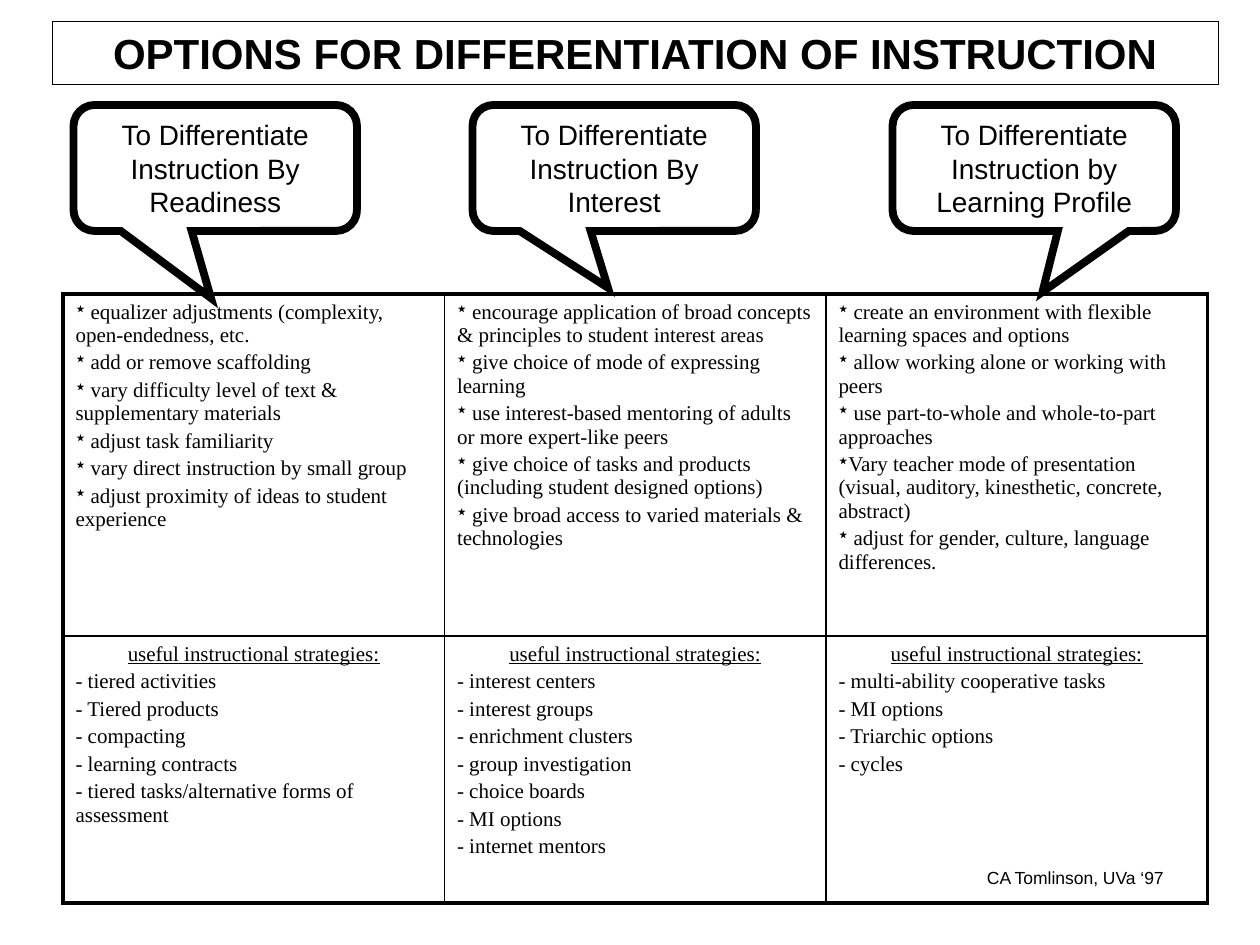
from dataclasses import dataclass

from lxml.etree import SubElement
from pptx import Presentation
from pptx.dml.color import RGBColor
from pptx.enum.shapes import MSO_SHAPE
from pptx.enum.text import MSO_ANCHOR, PP_ALIGN
from pptx.oxml.ns import qn
from pptx.util import Pt


@dataclass(frozen=True)
class Theme:
    ink: RGBColor = RGBColor(0, 0, 0)
    sans: str = "Arial"
    serif: str = "Times New Roman"
    title: float = 24
    callout: float = 16
    body: float = 12
    credit: float = 10
    hairline: float = 0.25
    inner: float = 1
    outer: float = 2.25
    heavy: float = 4.5


@dataclass(frozen=True)
class Option:
    left: float
    tip: tuple[float, float]
    heading: str
    ideas: tuple[str, ...]
    strategies: tuple[str, ...]


THEME = Theme()
STRATEGY_HEADING = "useful instructional strategies:"
TABLE_LEFT, TABLE_TOP, COL_WIDTH = 36, 168, 218
ROW_HEIGHTS = (195.5, 152.5)

OPTIONS = (
    Option(
        42, (-0.015, 1.033), "To Differentiate Instruction By Readiness",
        (" equalizer adjustments (complexity, open-endedness, etc.",
         " add or remove scaffolding",
         " vary difficulty level of text & supplementary materials",
         " adjust task familiarity",
         " vary direct instruction by small group",
         " adjust proximity of ideas to student experience"),
        (" tiered activities", " Tiered products", " compacting",
         " learning contracts",
         " tiered tasks/alternative forms of assessment"),
    ),
    Option(
        270, (-0.022, 0.951), "To Differentiate Instruction By Interest",
        (" encourage application of broad concepts & principles to student interest areas",
         " give choice of mode of expressing learning",
         " use interest-based mentoring of adults or more expert-like peers",
         " give choice of tasks and products (including student designed options)",
         " give broad access to varied materials & technologies"),
        (" interest centers", " interest groups", " enrichment clusters",
         " group investigation", " choice boards", " MI options",
         " internet mentors"),
    ),
    Option(
        510, (0.029, 0.984), "To Differentiate Instruction by Learning Profile",
        (" create an environment with flexible learning spaces and options",
         " allow working alone or working with peers",
         " use part-to-whole and whole-to-part approaches",
         "Vary teacher mode of presentation (visual, auditory, kinesthetic, concrete, abstract)",
         " adjust for gender, culture, language differences."),
        (" multi-ability cooperative tasks", " MI options",
         " Triarchic options", " cycles"),
    ),
)


def add_text(tf, text: str, *, size: float, font: str = THEME.sans,
             align=PP_ALIGN.LEFT, bold: bool = False, underline: bool = False,
             bullet: str = "", before: float = 0) -> None:
    p = tf.paragraphs[0]
    if p.runs:
        p = tf.add_paragraph()
    p.alignment = align
    p.space_before = Pt(before)
    if bullet:
        p_pr = p._p.get_or_add_pPr()
        SubElement(p_pr, qn("a:buFont"), typeface=font)
        SubElement(p_pr, qn("a:buChar"), char=bullet)
    r = p.add_run()
    r.text = text
    r.font.size = Pt(size)
    r.font.name = font
    r.font.bold = bold
    r.font.underline = underline
    r.font.color.rgb = THEME.ink


def add_outline(s, kind, left: float, top: float, width: float, height: float,
                line: float):
    sp = s.shapes.add_shape(kind, Pt(left), Pt(top), Pt(width), Pt(height))
    sp.shadow.inherit = False
    sp.fill.background()
    sp.line.color.rgb = THEME.ink
    sp.line.width = Pt(line)
    SubElement(sp._element.spPr.find(qn("a:ln")), qn("a:miter"), lim="800000")
    sp.text_frame.word_wrap = True
    sp.text_frame.vertical_anchor = MSO_ANCHOR.MIDDLE
    return sp


def add_callout(s, option: Option) -> None:
    sp = add_outline(s, MSO_SHAPE.ROUNDED_RECTANGULAR_CALLOUT,
                     option.left, 60, 162, 72, THEME.heavy)
    for i, value in enumerate((*option.tip, 0.167)):
        sp.adjustments[i] = value
    add_text(sp.text_frame, option.heading, size=THEME.callout,
             align=PP_ALIGN.CENTER)


def set_borders(cell, row: int, col: int) -> None:
    outer_edges = {
        "a:lnL": col == 0,
        "a:lnR": col == len(OPTIONS) - 1,
        "a:lnT": row == 0,
        "a:lnB": row == len(ROW_HEIGHTS) - 1,
    }
    tc_pr = cell._tc.get_or_add_tcPr()
    for tag, is_outer in outer_edges.items():
        width = THEME.outer if is_outer else THEME.inner
        ln = SubElement(tc_pr, qn(tag), w=str(Pt(width)))
        fill = SubElement(ln, qn("a:solidFill"))
        SubElement(fill, qn("a:srgbClr"), val=str(THEME.ink))
    cell.fill.background()


def add_list(tf, items: tuple[str, ...], bullet: str) -> None:
    for item in items:
        add_text(tf, item, size=THEME.body, font=THEME.serif, bullet=bullet,
                 before=0.2 * THEME.body)


def add_options_table(s) -> None:
    table = s.shapes.add_table(
        len(ROW_HEIGHTS), len(OPTIONS), Pt(TABLE_LEFT), Pt(TABLE_TOP),
        Pt(COL_WIDTH * len(OPTIONS)), Pt(sum(ROW_HEIGHTS))).table
    table.first_row = False
    table.horz_banding = False
    for row, height in enumerate(ROW_HEIGHTS):
        table.rows[row].height = Pt(height)
    for col, option in enumerate(OPTIONS):
        table.columns[col].width = Pt(COL_WIDTH)
        ideas, strategies = table.cell(0, col), table.cell(1, col)
        add_list(ideas.text_frame, option.ideas, "٭")
        add_text(strategies.text_frame, STRATEGY_HEADING, size=THEME.body,
                 font=THEME.serif, align=PP_ALIGN.CENTER, underline=True)
        add_list(strategies.text_frame, option.strategies, "-")
        for row, cell in enumerate((ideas, strategies)):
            set_borders(cell, row, col)


def main() -> None:
    prs = Presentation()
    prs.slide_width, prs.slide_height = Pt(720), Pt(540)
    s = prs.slides.add_slide(prs.slide_layouts[6])

    title = add_outline(s, MSO_SHAPE.RECTANGLE, 30, 12, 666, 36, THEME.hairline)
    add_text(title.text_frame, "OPTIONS FOR DIFFERENTIATION OF INSTRUCTION",
             size=THEME.title, align=PP_ALIGN.CENTER, bold=True)
    for option in OPTIONS:
        add_callout(s, option)
    add_options_table(s)

    credit = s.shapes.add_textbox(Pt(486), Pt(492), Pt(186), Pt(19.2))
    credit.text_frame.word_wrap = True
    add_text(credit.text_frame, "CA Tomlinson, UVa ‘97", size=THEME.credit,
             align=PP_ALIGN.RIGHT)
    prs.save("out.pptx")


if __name__ == "__main__":
    main()
